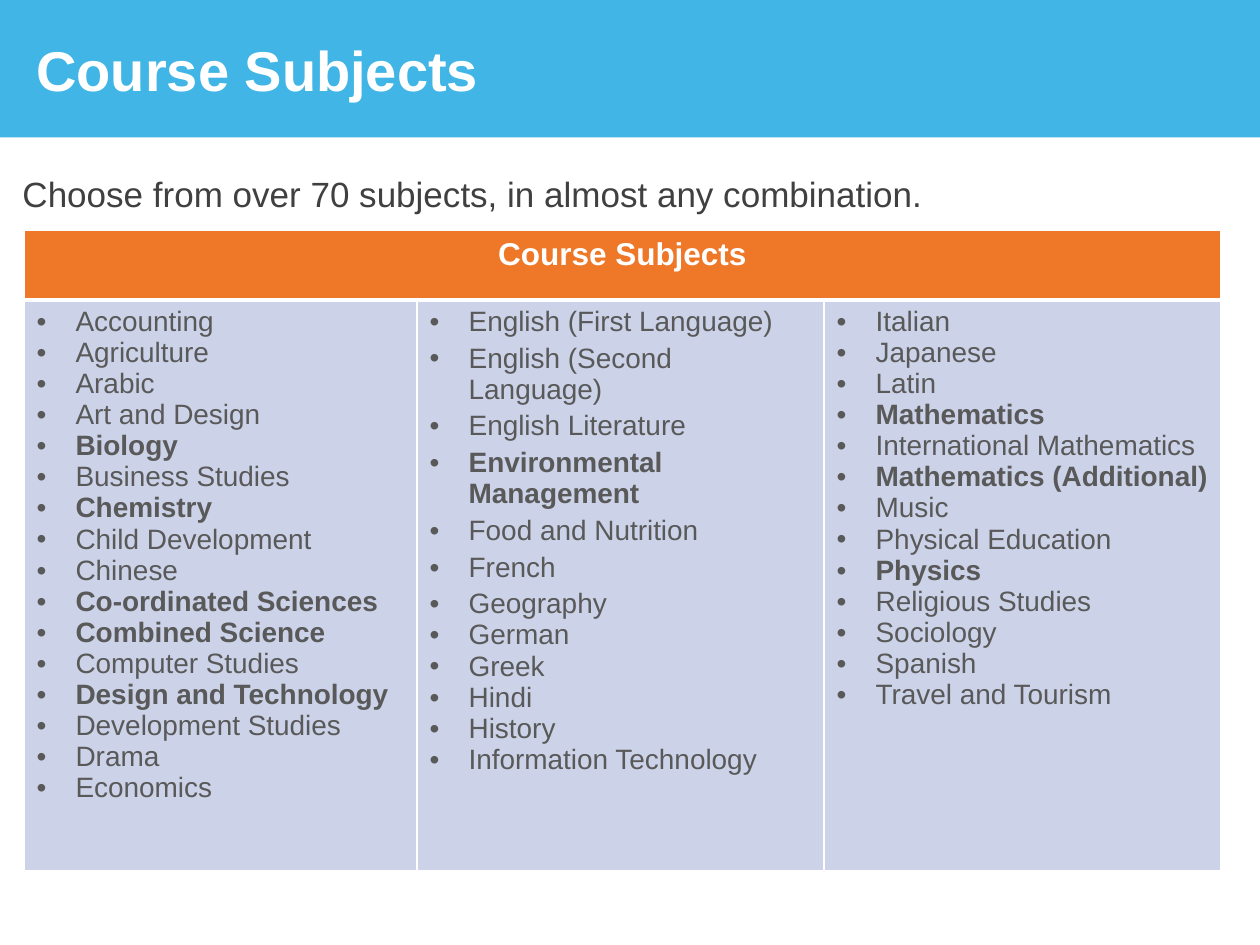
from lxml.etree import SubElement
from pptx import Presentation
from pptx.dml.color import RGBColor
from pptx.enum.shapes import MSO_SHAPE
from pptx.enum.text import MSO_ANCHOR, PP_ALIGN
from pptx.oxml import parse_xml
from pptx.oxml.ns import nsdecls, qn
from pptx.util import Inches, Pt

WHITE = RGBColor(0xFF, 0xFF, 0xFF)
BLUE = RGBColor(0x41, 0xB6, 0xE6)
ORANGE = RGBColor(0xEE, 0x77, 0x28)
PALE = RGBColor(0xCC, 0xD3, 0xE8)
DARK = RGBColor(0x40, 0x40, 0x40)
GREY = RGBColor(0x59, 0x59, 0x59)

HEAD = "Course Subjects"
LISTS = [
    ["Accounting", "Agriculture", "Arabic", "Art and Design", "Biology",
     "Business Studies", "Chemistry", "Child Development", "Chinese",
     "Co-ordinated Sciences", "Combined Science", "Computer Studies",
     "Design and Technology", "Development Studies", "Drama", "Economics"],
    ["English (First Language)", "English (Second Language)",
     "English Literature", "Environmental Management", "Food and Nutrition",
     "French", "Geography", "German", "Greek", "Hindi", "History",
     "Information Technology"],
    ["Italian", "Japanese", "Latin", "Mathematics",
     "International Mathematics", "Mathematics (Additional)", "Music",
     "Physical Education", "Physics", "Religious Studies", "Sociology",
     "Spanish", "Travel and Tourism"],
]
BOLD = {"Biology", "Chemistry", "Co-ordinated Sciences", "Combined Science",
        "Design and Technology", "Environmental Management", "Mathematics",
        "Mathematics (Additional)", "Physics"}
LOOSE = set(LISTS[1][1:7])


class Deck:
    """Holds the style and the current slide, and draws each kind of element."""

    def __init__(self, font):
        self.font = font
        self.prs = Presentation()
        self.prs.slide_width, self.prs.slide_height = Inches(10), Inches(7.5)
        self.slide = self.prs.slides.add_slide(self.prs.slide_layouts[6])

    def style(self, para, size, color, bold=False):
        font = para.font
        font.name, font.size, font.bold = self.font, Pt(size), bold
        font.color.rgb = color

    def band(self, box, color):
        shape = self.slide.shapes.add_shape(MSO_SHAPE.RECTANGLE, *map(Inches, box))
        shape.shadow.inherit = False
        shape.fill.solid()
        shape.fill.fore_color.rgb = color
        shape.line.fill.background()

    def text(self, box, words, size, color, bold=False, anchor=MSO_ANCHOR.TOP):
        frame = self.slide.shapes.add_textbox(*map(Inches, box)).text_frame
        frame.word_wrap = True
        frame.vertical_anchor = anchor
        para = frame.paragraphs[0]
        para.text = words
        self.style(para, size, color, bold)

    def table(self, box, cols, rows):
        shape = self.slide.shapes.add_table(len(rows), len(cols), *map(Inches, box))
        table = shape.table
        for col, width in zip(table.columns, cols):
            col.width = Inches(width)
        for row, height in zip(table.rows, rows):
            row.height = Inches(height)
        return table

    def cell(self, cell, color, top=1, base=1):
        props = cell._tc.get_or_add_tcPr()
        for side, width in zip("LRTB", (1, 1, top, base)):
            props.append(parse_xml(
                f'<a:ln{side} {nsdecls("a")} w="{Pt(width)}"><a:solidFill>'
                f'<a:srgbClr val="{WHITE}"/></a:solidFill></a:ln{side}>'))
        cell.fill.solid()
        cell.fill.fore_color.rgb = color

    def bullets(self, frame, items):
        for i, item in enumerate(items):
            para = frame.add_paragraph() if i else frame.paragraphs[0]
            para.text = item
            props = para._p.get_or_add_pPr()
            props.set("marL", str(Inches(0.31)))
            props.set("indent", str(Inches(-0.31)))
            SubElement(props, qn("a:buFont")).set("typeface", self.font)
            SubElement(props, qn("a:buChar")).set("char", "•")
            if item in LOOSE:
                para.space_before = Pt(3.2)
            self.style(para, 16, GREY, item in BOLD)


def main():
    deck = Deck("Arial")
    deck.band((0, 0, 10, 1.09), BLUE)
    deck.text((0.08, 1.32, 9.92, 0.5),
              "Choose from over 70 subjects, in almost any combination.", 20, DARK)
    table = deck.table((0.19, 1.83, 9.5, 5.08), (3.12, 3.23, 3.15), (0.55, 4.53))
    for col, items in enumerate(LISTS):
        deck.cell(table.cell(0, col), ORANGE, base=3)
        body = table.cell(1, col)
        deck.cell(body, PALE, top=3)
        deck.bullets(body.text_frame, items)
    head = table.cell(0, 0)
    head.merge(table.cell(0, 2))
    para = head.text_frame.paragraphs[0]
    para.text = HEAD
    para.alignment = PP_ALIGN.CENTER
    deck.style(para, 18, WHITE, True)
    deck.text((0.19, 0.12, 9.7, 0.85), HEAD, 32, WHITE, True, MSO_ANCHOR.MIDDLE)
    deck.prs.save("out.pptx")


if __name__ == "__main__":
    main()
